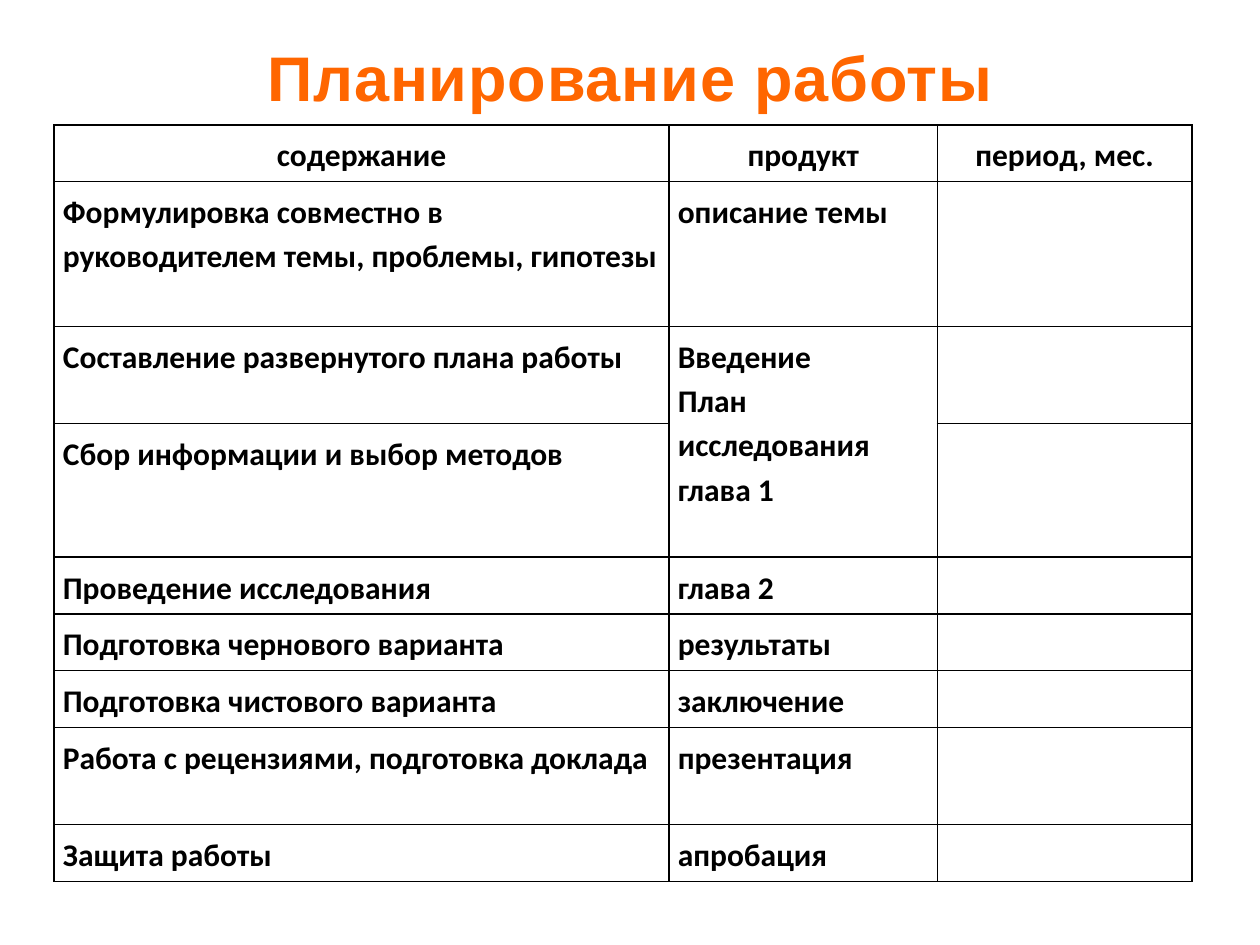
from lxml import etree
from pptx import Presentation
from pptx import util as u
from pptx.dml.color import RGBColor
from pptx.enum import text
from pptx.oxml import ns

ORANGE = RGBColor(0xFF, 0x66, 0x00)
BLACK = RGBColor(0, 0, 0)

COLUMNS = [4.88, 2.13, 2.02]
HEIGHTS = [0.45, 1.15, 0.77, 1.06, 0.45, 0.45, 0.45, 0.77, 0.45]
PLAN = [
    ("содержание", "продукт", "период, мес."),
    ("Формулировка совместно в руководителем темы, проблемы, гипотезы", "описание темы", ""),
    ("Составление развернутого плана работы", "Введение\nПлан исследования\nглава 1", ""),
    ("Сбор информации и выбор методов", "", ""),
    ("Проведение исследования", "глава 2", ""),
    ("Подготовка чернового варианта", "результаты", ""),
    ("Подготовка чистового варианта", "заключение", ""),
    ("Работа с рецензиями, подготовка доклада", "презентация", ""),
    ("Защита работы", "апробация", ""),
]


def apply(target, values):
    """Set every attribute named in values on target."""
    for name, value in values.items():
        setattr(target, name, value)


class PlanPage:
    """Holds the style and the current slide."""

    cell_font = {"name": "Calibri", "size": u.Pt(18), "bold": True}
    cell_margins = {
        "margin_left": u.Inches(0.07), "margin_right": u.Inches(0.07),
        "margin_top": u.Inches(0.05), "margin_bottom": u.Inches(0.05),
    }
    border_width = u.Pt(0.96)

    def __init__(self, deck):
        """Add a title-only slide to the deck."""
        self.page = deck.slides.add_slide(deck.slide_layouts[5])

    def span(self, para, words, color, values):
        """Add a formatted run to a paragraph."""
        span = para.add_run()
        span.text = words
        apply(span.font, values)
        span.font.color.rgb = color
        return span

    def title(self, words, left, top, width, height):
        """Place the title with slightly spaced words."""
        box = self.page.shapes.title
        apply(box, {"left": u.Inches(left), "top": u.Inches(top),
                    "width": u.Inches(width), "height": u.Inches(height)})
        apply(box.text_frame, {"auto_size": text.MSO_AUTO_SIZE.NONE, "word_wrap": True,
                               "vertical_anchor": text.MSO_ANCHOR.MIDDLE})
        para = box.text_frame.paragraphs[0]
        para.alignment = text.PP_ALIGN.CENTER
        word_font = {"name": "Arial", "size": u.Pt(36), "bold": True}
        gap_font = {"name": "Calibri", "size": u.Pt(44), "bold": True}
        for index, word in enumerate(words.split()):
            if index:
                self.span(para, " ", ORANGE, gap_font)
            span = self.span(para, word, ORANGE, word_font)
            span.font._element.set("spc", "50")

    def borders(self, cell):
        """Draw a thin line on all four sides of a cell."""
        properties = cell._tc.get_or_add_tcPr()
        for side in ("a:lnL", "a:lnR", "a:lnT", "a:lnB"):
            line = etree.SubElement(properties, ns.qn(side), w=str(self.border_width))
            fill = etree.SubElement(line, ns.qn("a:solidFill"))
            etree.SubElement(fill, ns.qn("a:srgbClr"), val=str(BLACK))

    def cell(self, cell, words, alignment):
        """Fill and format one table cell."""
        apply(cell, self.cell_margins)
        self.borders(cell)
        cell.fill.background()
        for index, line in enumerate(words.split("\n") if words else []):
            frame = cell.text_frame
            para = frame.add_paragraph() if index else frame.paragraphs[0]
            apply(para, {"alignment": alignment, "line_spacing": 1.15})
            self.span(para, line, BLACK, self.cell_font)

    def table(self, rows, left, top, widths, heights):
        """Add a bordered table with a centred heading row."""
        table = self.page.shapes.add_table(
            len(rows), len(widths), u.Inches(left), u.Inches(top),
            u.Inches(sum(widths)), u.Inches(sum(heights))).table
        apply(table, {"first_row": False, "horz_banding": False})
        for column, width in zip(table.columns, widths):
            column.width = u.Inches(width)
        for index, (row, height, entries) in enumerate(zip(table.rows, heights, rows)):
            row.height = u.Inches(height)
            alignment = text.PP_ALIGN.LEFT if index else text.PP_ALIGN.CENTER
            for cell, words in zip(row.cells, entries):
                self.cell(cell, words, alignment)
        return table


def main():
    """Build and save the work plan slide."""
    deck = Presentation()
    apply(deck, {"slide_width": u.Inches(10), "slide_height": u.Inches(7.5)})
    plan = PlanPage(deck)
    plan.title("Планирование работы", 0.5, 0.13, 9, 0.87)
    table = plan.table(PLAN, 0.43, 0.99, COLUMNS, HEIGHTS)
    table.cell(2, 1).merge(table.cell(3, 1))
    deck.save("out.pptx")


if __name__ == "__main__":
    main()
